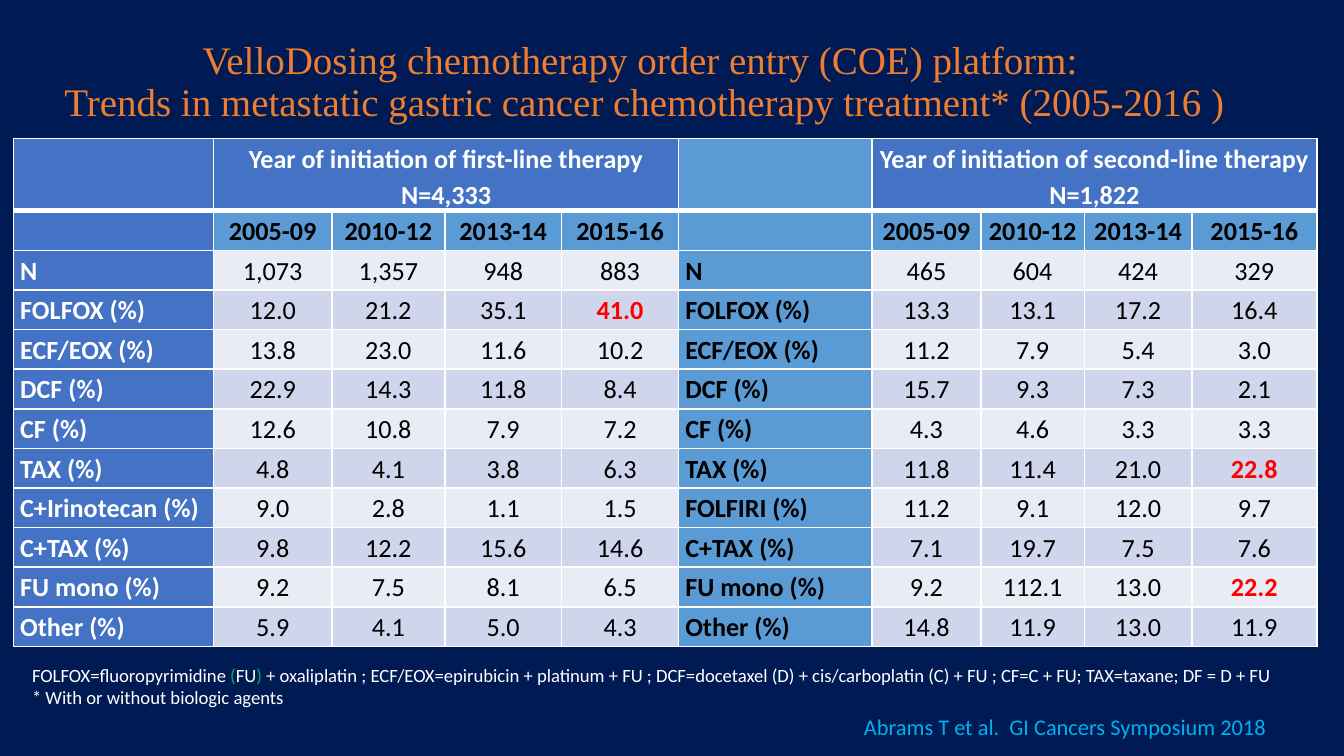
"""Build a slide comparing first-line and second-line gastric cancer chemotherapy trends."""
import dataclasses
import typing

import lxml.etree
import pptx
import pptx.dml.color
import pptx.enum.text
import pptx.oxml.ns
import pptx.util

Inches = pptx.util.Inches
RGBColor = pptx.dml.color.RGBColor
Align = pptx.enum.text.PP_ALIGN

NAVY = RGBColor(0x00, 0x1B, 0x53)
ORANGE = RGBColor(0xED, 0x7D, 0x31)
WHITE = RGBColor(0xFF, 0xFF, 0xFF)
BLACK = RGBColor(0x00, 0x00, 0x00)
RED = RGBColor(0xFF, 0x00, 0x00)
GREEN = RGBColor(0x00, 0xB0, 0x50)
CYAN = RGBColor(0x00, 0xB0, 0xF0)
DARK_BLUE = RGBColor(0x44, 0x72, 0xC4)
MID_BLUE = RGBColor(0x5B, 0x9B, 0xD5)
BANDS = (RGBColor(0xE9, 0xEB, 0xF5), RGBColor(0xCF, 0xD5, 0xEA))


@dataclasses.dataclass(frozen=True)
class Span:
    text: str
    color: RGBColor


@dataclasses.dataclass(frozen=True)
class Therapy:
    heading: str
    total: str
    first_column: int
    label_fill: RGBColor
    corner_fill: RGBColor
    label_color: RGBColor
    rows: tuple[str, ...]
    highlights: tuple[str, ...]


PERIODS = ("2005-09", "2010-12", "2013-14", "2015-16")
COLUMN_WIDTHS = (1.49, 0.88, 0.84, 0.87, 0.87, 1.44, 0.81, 0.77, 0.8, 0.93)
HEADER_HEIGHT = 0.54
TABLE_HEIGHT = 3.78
THERAPIES = (
    Therapy(
        "Year of initiation of first-line therapy", "N=4,333", 0,
        DARK_BLUE, DARK_BLUE, WHITE,
        (
            "N|1,073|1,357|948|883",
            "FOLFOX (%)|12.0|21.2|35.1|41.0",
            "ECF/EOX (%)|13.8|23.0|11.6|10.2",
            "DCF (%)|22.9|14.3|11.8|8.4",
            "CF (%)|12.6|10.8|7.9|7.2",
            "TAX (%)|4.8|4.1|3.8|6.3",
            "C+Irinotecan (%)|9.0|2.8|1.1|1.5",
            "C+TAX (%)|9.8|12.2|15.6|14.6",
            "FU mono (%)|9.2|7.5|8.1|6.5",
            "Other (%)|5.9|4.1|5.0|4.3",
        ),
        ("41.0",),
    ),
    Therapy(
        "Year of initiation of second-line therapy", "N=1,822", 5,
        MID_BLUE, MID_BLUE, BLACK,
        (
            "N|465|604|424|329",
            "FOLFOX (%)|13.3|13.1|17.2|16.4",
            "ECF/EOX (%)|11.2|7.9|5.4|3.0",
            "DCF (%)|15.7|9.3|7.3|2.1",
            "CF (%)|4.3|4.6|3.3|3.3",
            "TAX (%)|11.8|11.4|21.0|22.8",
            "FOLFIRI (%)|11.2|9.1|12.0|9.7",
            "C+TAX (%)|7.1|19.7|7.5|7.6",
            "FU mono (%)|9.2|112.1|13.0|22.2",
            "Other (%)|14.8|11.9|13.0|11.9",
        ),
        ("22.8", "22.2"),
    ),
)


def write_text(
    frame: typing.Any,
    lines: typing.Sequence[typing.Sequence[Span]],
    *,
    size: float,
    font: str = "Calibri",
    bold: bool = False,
    align: Align = Align.LEFT,
    spacing: float = 1.0,
) -> None:
    for index, spans in enumerate(lines):
        para = frame.paragraphs[0] if index == 0 else frame.add_paragraph()
        para.alignment = align
        para.line_spacing = spacing
        for part in spans:
            for position, piece in enumerate(part.text.split("\n")):
                if position:
                    para.add_line_break()
                span = para.add_run()
                span.text = piece
                span.font.name = font
                span.font.size = pptx.util.Pt(size)
                span.font.bold = bold
                span.font.color.rgb = part.color


def add_text(
    page: typing.Any,
    place: tuple[float, float, float, float],
    lines: typing.Sequence[typing.Sequence[Span]],
    **text_format: typing.Any,
) -> typing.Any:
    box = page.shapes.add_textbox(*map(Inches, place))
    box.text_frame.word_wrap = True
    write_text(box.text_frame, lines, **text_format)
    return box


def add_border(cell: typing.Any, side: str, width: float) -> None:
    qn = pptx.oxml.ns.qn
    properties = cell._tc.get_or_add_tcPr()
    line = lxml.etree.SubElement(properties, qn(f"a:ln{side}"), w=str(pptx.util.Pt(width)))
    fill = lxml.etree.SubElement(line, qn("a:solidFill"))
    lxml.etree.SubElement(fill, qn("a:srgbClr"), val=str(WHITE))


def style_cell(cell: typing.Any, fill: RGBColor, row: int) -> None:
    cell.margin_left = cell.margin_right = Inches(0.05)
    cell.margin_top = cell.margin_bottom = 0
    for side in "LRTB":
        thick = (row, side) in ((0, "B"), (1, "T"))
        add_border(cell, side, 3 if thick else 1)
    cell.fill.solid()
    cell.fill.fore_color.rgb = fill


def fill_cell(
    table: typing.Any,
    row: int,
    column: int,
    fill: RGBColor,
    texts: typing.Sequence[str] = (),
    color: RGBColor = BLACK,
    bold: bool = True,
    align: Align = Align.CENTER,
) -> None:
    cell = table.cell(row, column)
    style_cell(cell, fill, row)
    if texts:
        lines = [[Span(text, color)] for text in texts]
        write_text(cell.text_frame, lines, size=14, bold=bold, align=align, spacing=1.15)
    else:
        para = cell.text_frame.paragraphs[0]
        lxml.etree.SubElement(para._p, pptx.oxml.ns.qn("a:endParaRPr"), sz="1400")


def fill_therapy(table: typing.Any, therapy: Therapy) -> None:
    start = therapy.first_column
    for row in range(2):
        fill_cell(table, row, start, therapy.corner_fill)
    fill_cell(table, 0, start + 1, DARK_BLUE, (therapy.heading, therapy.total), WHITE)
    for column in range(start + 2, start + 5):
        fill_cell(table, 0, column, DARK_BLUE)
    table.cell(0, start + 1).merge(table.cell(0, start + 4))
    for column, period in enumerate(PERIODS, start + 1):
        fill_cell(table, 1, column, MID_BLUE, (period,))
    for row, record in enumerate(therapy.rows, 2):
        label, *values = record.split("|")
        fill_cell(table, row, start, therapy.label_fill, (label,), therapy.label_color, align=Align.LEFT)
        for column, value in enumerate(values, start + 1):
            marked = value in therapy.highlights
            fill_cell(table, row, column, BANDS[row % 2], (value,), RED if marked else BLACK, marked)


def add_trend_table(page: typing.Any) -> None:
    row_count = len(THERAPIES[0].rows) + 2
    table = page.shapes.add_table(
        row_count, len(COLUMN_WIDTHS), Inches(0.1), Inches(1.03), Inches(9.7), Inches(TABLE_HEIGHT)
    ).table
    for column, width in zip(table.columns, COLUMN_WIDTHS):
        column.width = Inches(width)
    body_height = (TABLE_HEIGHT - HEADER_HEIGHT) / (row_count - 1)
    for index, row in enumerate(table.rows):
        row.height = Inches(body_height if index else HEADER_HEIGHT)
    for therapy in THERAPIES:
        fill_therapy(table, therapy)


def main() -> None:
    deck = pptx.Presentation()
    deck.slide_width, deck.slide_height = Inches(10), Inches(10 * 9 / 16)
    page = deck.slides.add_slide(deck.slide_layouts[6])
    page.background.fill.solid()
    page.background.fill.fore_color.rgb = NAVY
    heading = (
        "VelloDosing chemotherapy order entry (COE) platform:\n"
        " Trends in metastatic gastric cancer chemotherapy treatment* (2005-2016 )"
    )
    title = add_text(
        page, (0.22, 0.3, 9.09, 0.64), [[Span(heading, ORANGE)]],
        size=20.9, font="Times New Roman", align=Align.CENTER, spacing=0.9,
    )
    title.text_frame.margin_top = title.text_frame.margin_bottom = 0
    title.text_frame.vertical_anchor = pptx.enum.text.MSO_ANCHOR.MIDDLE
    add_trend_table(page)
    regimens = (
        " + oxaliplatin ; ECF/EOX=epirubicin + platinum + FU ; DCF=docetaxel (D) + "
        "cis/carboplatin (C) + FU ; CF=C + FU; TAX=taxane; DF = D + FU"
    )
    abbreviations = [
        Span("FOLFOX=fluoropyrimidine ", WHITE), Span("(", GREEN), Span("FU", WHITE),
        Span(")", GREEN), Span(regimens, WHITE),
    ]
    biologics = [Span("* With or without biologic agents", WHITE)]
    add_text(page, (0.14, 4.89, 9.66, 0.44), [abbreviations, biologics], size=10)
    citation = [Span("Abrams T et al.  GI Cancers Symposium 2018", CYAN)]
    add_text(page, (6.33, 5.26, 3.46, 0.3), [citation], size=12)
    deck.save("out.pptx")


if __name__ == "__main__":
    main()
